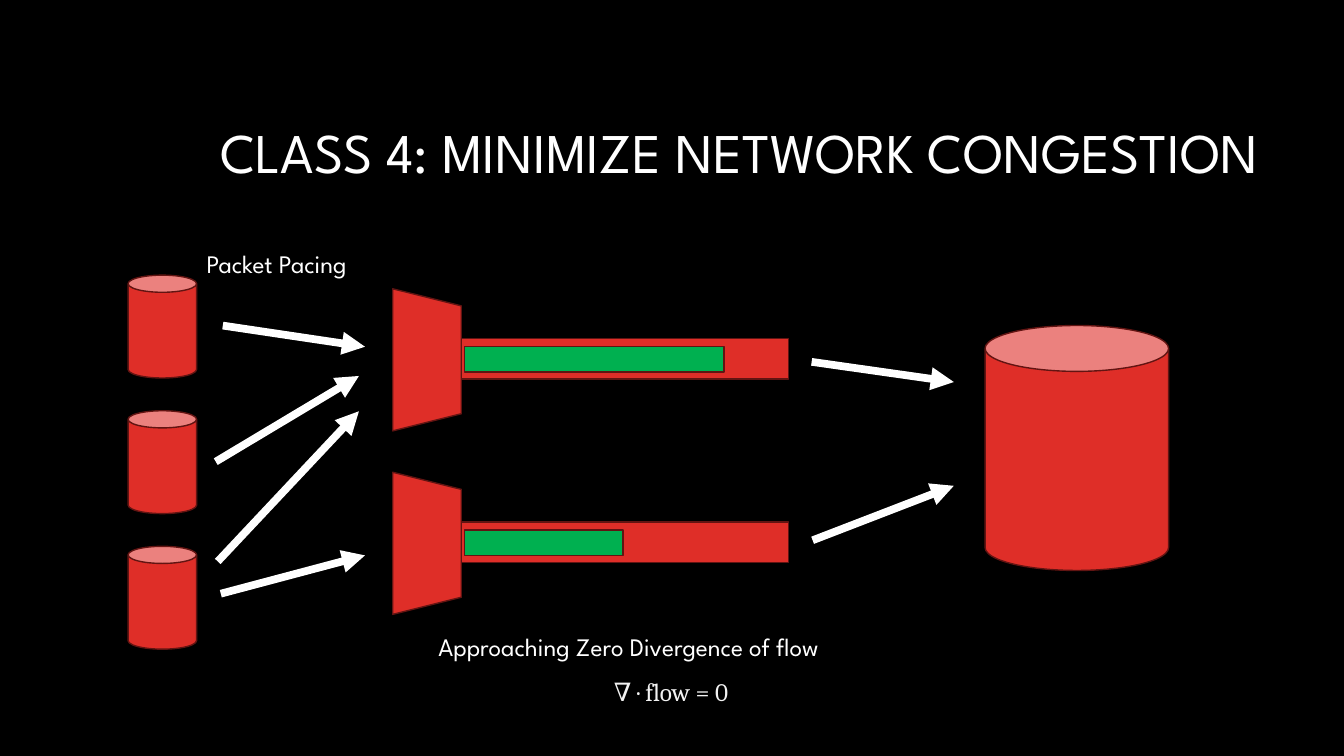
from dataclasses import dataclass

from lxml.etree import SubElement
from pptx import Presentation
from pptx.dml.color import RGBColor
from pptx.enum.shapes import MSO_CONNECTOR, MSO_SHAPE
from pptx.enum.text import MSO_ANCHOR, MSO_AUTO_SIZE, PP_ALIGN
from pptx.oxml.ns import qn
from pptx.util import Inches, Pt

RED, GREEN, EDGE, WHITE = "DF2E28", "00B050", "621412", "FFFFFF"


@dataclass
class Box:
    left: float
    top: float
    width: float
    height: float

    def sizes(self) -> list[int]:
        return [Inches(v) for v in (self.left, self.top, self.width, self.height)]


@dataclass
class Queue:
    """A funnel and its pipe, part filled with packets."""
    top: float
    fill: float


@dataclass
class Arrow:
    x1: float
    y1: float
    x2: float
    y2: float


QUEUES = [Queue(3.23, 2.57), Queue(5.05, 1.57)]
ARROWS = [
    Arrow(2.21, 3.23, 3.62, 3.44),
    Arrow(2.19, 5.89, 3.62, 5.51),
    Arrow(2.14, 4.58, 3.56, 3.73),
    Arrow(2.16, 5.57, 3.56, 4.08),
    Arrow(8.05, 3.59, 9.46, 3.79),
    Arrow(8.06, 5.36, 9.46, 4.82),
]


def color(code: str) -> RGBColor:
    return RGBColor.from_string(code)


def add_part(slide, kind: MSO_SHAPE, box: Box, fill: str = RED, turn: float = 0) -> None:
    part = slide.shapes.add_shape(kind, *box.sizes())
    part.rotation = turn
    part.shadow.inherit = False
    part.fill.solid()
    part.fill.fore_color.rgb = color(fill)
    part.line.color.rgb = color(EDGE)
    part.line.width = Pt(1)


def add_queue(slide, queue: Queue) -> None:
    add_part(slide, MSO_SHAPE.TRAPEZOID, Box(3.53, queue.top, 1.41, 0.68), turn=90)
    add_part(slide, MSO_SHAPE.RECTANGLE, Box(4.58, queue.top + 0.13, 3.24, 0.4))
    add_part(slide, MSO_SHAPE.RECTANGLE, Box(4.61, queue.top + 0.21, queue.fill, 0.25), GREEN)


def add_arrow(slide, arrow: Arrow) -> None:
    ends = [Inches(v) for v in (arrow.x1, arrow.y1, arrow.x2, arrow.y2)]
    link = slide.shapes.add_connector(MSO_CONNECTOR.STRAIGHT, *ends)
    link.line.color.rgb = color(WHITE)
    link.line.width = Pt(5.5)
    SubElement(link.line._get_or_add_ln(), qn("a:tailEnd"), type="triangle")
    SubElement(link._element.spPr, qn("a:effectLst"))


def add_text(slide, text: str, box: Box, *, size: float = 18,
             font: str = "League Spartan", ink: str = WHITE, wrap: bool = False,
             align: PP_ALIGN = PP_ALIGN.LEFT, anchor: MSO_ANCHOR = MSO_ANCHOR.TOP,
             space: float = 1) -> None:
    frame = slide.shapes.add_textbox(*box.sizes()).text_frame
    frame.word_wrap = wrap
    frame.auto_size = MSO_AUTO_SIZE.NONE if wrap else MSO_AUTO_SIZE.SHAPE_TO_FIT_TEXT
    frame.vertical_anchor = anchor
    line = frame.paragraphs[0]
    line.alignment = align
    line.line_spacing = space
    run = line.add_run()
    run.text = text
    run.font.name = font
    run.font.size = Pt(size)
    run.font.color.rgb = color(ink)


def main() -> None:
    deck = Presentation()
    deck.slide_width, deck.slide_height = Inches(13.33), Inches(7.5)
    slide = deck.slides.add_slide(deck.slide_layouts[6])
    slide.background.fill.solid()
    slide.background.fill.fore_color.rgb = color("000000")

    add_text(slide, "CLASS 4: MINIMIZE NETWORK CONGESTION", Box(0.75, 0.84, 11.83, 1.41),
             size=40, wrap=True, align=PP_ALIGN.RIGHT, anchor=MSO_ANCHOR.MIDDLE, space=0.9)
    for row in range(3):
        add_part(slide, MSO_SHAPE.CAN, Box(1.27, 2.73 + 1.345 * row, 0.68, 1.02))
    for queue in QUEUES:
        add_queue(slide, queue)
    add_part(slide, MSO_SHAPE.CAN, Box(9.77, 3.23, 1.82, 2.43))
    for arrow in ARROWS:
        add_arrow(slide, arrow)
    add_text(slide, "Packet Pacing", Box(1.95, 2.41, 1.99, 0.4))
    add_text(slide, "Approaching Zero Divergence of flow", Box(4.25, 6.21, 4.83, 0.4))
    add_text(slide, "∇ · flow = 0", Box(5.99, 6.66, 1.35, 0.4), font="Cambria", ink="F2F2F2")
    deck.save("out.pptx")


if __name__ == "__main__":
    main()
